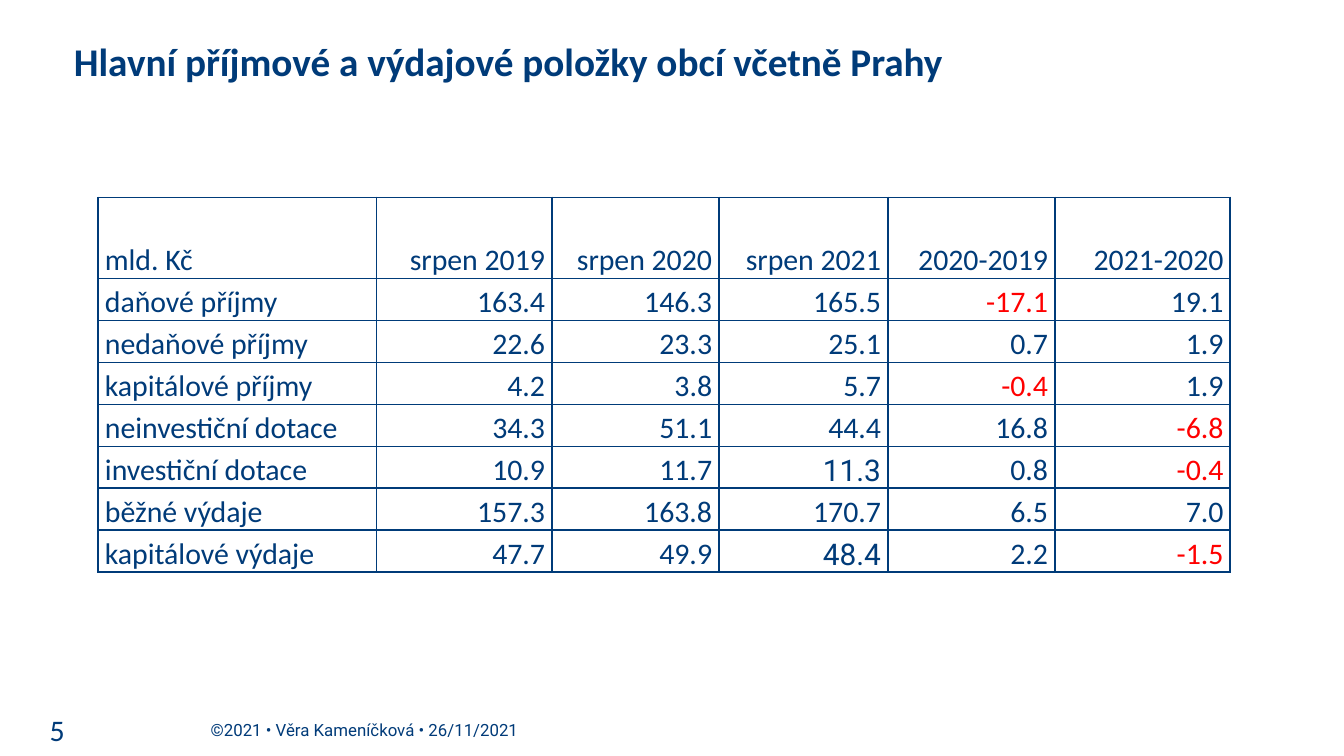
from typing import NamedTuple

from lxml.etree import SubElement
from pptx import Presentation
from pptx.dml.color import RGBColor
from pptx.enum.text import MSO_ANCHOR, PP_ALIGN
from pptx.oxml.ns import qn
from pptx.util import Pt

NAVY = RGBColor(0x00, 0x3B, 0x79)
FOOTER_BLUE = RGBColor(0x01, 0x3B, 0x79)
RED = RGBColor(0xFF, 0x00, 0x00)


class BudgetRow(NamedTuple):
    label: str
    values: tuple[str, ...]
    roboto_columns: tuple[int, ...] = ()


class FooterText(NamedTuple):
    text: str
    left: float
    width: float
    font: str
    size: float
    align: PP_ALIGN


COLUMN_WIDTHS = (149, 94, 89.5, 90.5, 89.5, 94)
HEADER_HEIGHT, ROW_HEIGHT = 43.4, 22.5
ROWS = (
    BudgetRow("mld. Kč", ("srpen 2019", "srpen 2020", "srpen 2021", "2020-2019", "2021-2020")),
    BudgetRow("daňové příjmy", ("163.4", "146.3", "165.5", "-17.1", "19.1")),
    BudgetRow("nedaňové příjmy", ("22.6", "23.3", "25.1", "0.7", "1.9")),
    BudgetRow("kapitálové příjmy", ("4.2", "3.8", "5.7", "-0.4", "1.9")),
    BudgetRow("neinvestiční dotace", ("34.3", "51.1", "44.4", "16.8", "-6.8")),
    BudgetRow("investiční dotace", ("10.9", "11.7", "11.3", "0.8", "-0.4"), (3,)),
    BudgetRow("běžné výdaje", ("157.3", "163.8", "170.7", "6.5", "7.0")),
    BudgetRow("kapitálové výdaje", ("47.7", "49.9", "48.4", "2.2", "-1.5"), (3,)),
)
FOOTERS = (
    FooterText("©2021 • Věra Kameníčková • 26/11/2021", 105.8, 243.4, "Roboto", 9, PP_ALIGN.LEFT),
    FooterText("5", -5.8, 47.5, "Calibri", 16, PP_ALIGN.RIGHT),
)


def write_text(frame, text: str, *, size: float, font: str = "Calibri",
               color: RGBColor = NAVY, bold: bool = False,
               align: PP_ALIGN = PP_ALIGN.LEFT, spacing: float = 1.0) -> None:
    para = frame.paragraphs[0]
    para.alignment = align
    para.line_spacing = spacing
    span = para.add_run()
    span.text = text
    span.font.name = font
    span.font.size = Pt(size)
    span.font.bold = bold
    span.font.color.rgb = color


def add_borders(cell) -> None:
    properties = cell._tc.get_or_add_tcPr()
    for side in ("a:lnL", "a:lnR", "a:lnT", "a:lnB"):
        line = SubElement(properties, qn(side), w=str(Pt(1)))
        fill = SubElement(line, qn("a:solidFill"))
        SubElement(fill, qn("a:srgbClr"), val=str(NAVY))


def format_cell(cell, text: str, font: str, align: PP_ALIGN) -> None:
    cell.margin_left = cell.margin_right = Pt(3.6)
    cell.margin_top = cell.margin_bottom = 0
    cell.vertical_anchor = MSO_ANCHOR.BOTTOM
    add_borders(cell)
    cell.fill.background()
    write_text(cell.text_frame, text, size=16, font=font, align=align, spacing=1.07,
               color=RED if text.startswith("-") else NAVY)


def add_title(page, text: str) -> None:
    title = page.shapes.title
    title.left, title.top, title.width, title.height = Pt(36), Pt(16.5), Pt(648), Pt(32)
    frame = title.text_frame
    frame.margin_left = frame.margin_right = Pt(3.6)
    frame.margin_top = frame.margin_bottom = Pt(3.6)
    frame.vertical_anchor = MSO_ANCHOR.TOP
    write_text(frame, text, size=21, bold=True)


def add_budget_table(page) -> None:
    heights = [HEADER_HEIGHT] + [ROW_HEIGHT] * (len(ROWS) - 1)
    table = page.shapes.add_table(len(ROWS), len(COLUMN_WIDTHS), Pt(52.6), Pt(105.8),
                                  Pt(sum(COLUMN_WIDTHS)), Pt(sum(heights))).table
    table.first_row = table.horz_banding = False
    for column, width in zip(table.columns, COLUMN_WIDTHS):
        column.width = Pt(width)
    for index, (row, height) in enumerate(zip(ROWS, heights)):
        table.rows[index].height = Pt(height)
        for column, text in enumerate((row.label, *row.values)):
            font = "Roboto" if column in row.roboto_columns else "Calibri"
            align = PP_ALIGN.RIGHT if column else PP_ALIGN.LEFT
            format_cell(table.cell(index, column), text, font, align)


def add_footer(page, footer: FooterText) -> None:
    box = page.shapes.add_textbox(Pt(footer.left), Pt(380), Pt(footer.width), Pt(21.6))
    frame = box.text_frame
    frame.word_wrap = True
    frame.vertical_anchor = MSO_ANCHOR.MIDDLE
    write_text(frame, footer.text, size=footer.size, font=footer.font,
               color=FOOTER_BLUE, align=footer.align)


def main() -> None:
    deck = Presentation()
    deck.slide_width, deck.slide_height = Pt(720), Pt(405)
    page = deck.slides.add_slide(deck.slide_layouts[5])
    add_title(page, "Hlavní příjmové a výdajové položky obcí včetně Prahy")
    for footer in FOOTERS:
        add_footer(page, footer)
    add_budget_table(page)
    deck.save("out.pptx")


if __name__ == "__main__":
    main()
